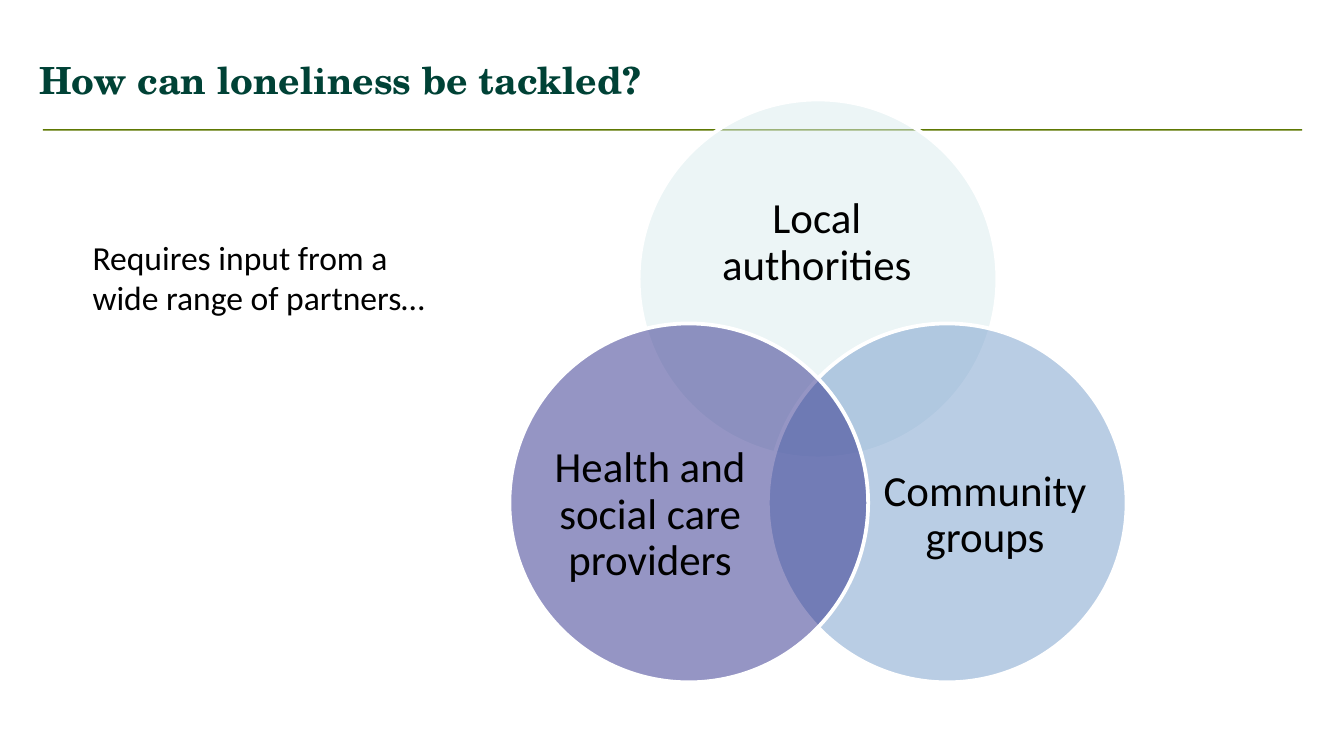
from math import cos, radians, sin

from lxml.etree import SubElement
from pptx import Presentation
from pptx.dml.color import RGBColor
from pptx.enum.shapes import MSO_SHAPE as Shape
from pptx.enum.text import MSO_ANCHOR as Anchor, PP_ALIGN as Align
from pptx.oxml.ns import qn
from pptx.util import Cm, Pt


def color(code):
    return RGBColor.from_string(code)


class Deck:
    serif, sans = "TeX Gyre Schola", "Calibri"
    black, white, green, olive = "000000", "FFFFFF", "004236", "5E7803"

    def __init__(self, slide):
        self.slide = slide

    def form(self, kind, box, fill):
        shape = self.slide.shapes.add_shape(kind, *map(Cm, box))
        shape.shadow.inherit = False
        shape.fill.solid()
        shape.fill.fore_color.rgb = color(fill)
        shape.line.fill.background()
        return shape

    def rule(self, box):
        self.form(Shape.RECTANGLE, box, self.olive)

    def disc(self, x, y, size, fill):
        """Draw a half-clear circle centred on x, y."""
        shape = self.form(Shape.OVAL, (x - size / 2, y - size / 2, size, size), fill)
        tint = shape.fill._xPr.find(".//" + qn("a:srgbClr"))
        SubElement(tint, qn("a:alpha"), val="50000")
        shape.line.color.rgb = color(self.white)
        shape.line.width = Pt(2)

    def text(self, words, box, size, pads=(0.25, 0.13, 0.25, 0.13), face=sans,
             ink=black, bold=False, anchor=Anchor.TOP):
        frame = self.slide.shapes.add_textbox(*map(Cm, box)).text_frame
        frame.word_wrap = True
        frame.vertical_anchor = anchor
        (frame.margin_left, frame.margin_top,
         frame.margin_right, frame.margin_bottom) = map(Cm, pads)
        frame.text = words
        para = frame.paragraphs[0]
        font = para.runs[0].font
        font.name, font.size, font.bold = face, Pt(size), bold
        font.color.rgb = color(ink)
        return para

    def title(self, words, box):
        self.text(words, box, 20, (0.1, 0.1, 0.23, 0), self.serif,
                  self.green, True, Anchor.MIDDLE)

    def label(self, words, box):
        para = self.text(words, box, 23, (0, 0, 0, 0), anchor=Anchor.MIDDLE)
        para.alignment = Align.CENTER
        para.line_spacing = 0.9


def main():
    show = Presentation()
    show.slide_width, show.slide_height = Cm(25.4), Cm(14.28)
    deck = Deck(show.slides.add_slide(show.slide_layouts[6]))

    deck.rule((0.81, 2.44, 23.8, 0.03))
    deck.title("How can loneliness be tackled?", (0.64, 0.76, 21.26, 1.4))

    mid_x, mid_y, reach, size = 15.46, 8.09, 2.82, 6.78
    partners = [
        ("Local authorities", "DAEDEF", (12.95, 3.07, 4.98, 3.05)),
        ("Community groups", "759CCB", (16.59, 7.87, 4.06, 3.73)),
        ("Health and social care providers", "2D2D8A", (10.26, 7.87, 4.06, 3.73)),
    ]
    for i, (name, fill, box) in enumerate(partners):
        turn = radians(120 * i - 90)
        deck.disc(mid_x + reach * cos(turn), mid_y + reach * sin(turn), size, fill)
        deck.label(name, box)

    deck.text("Requires input from a wide range of partners…", (1.5, 4.34, 7.39, 1.8), 18)
    show.save("out.pptx")


if __name__ == "__main__":
    main()
